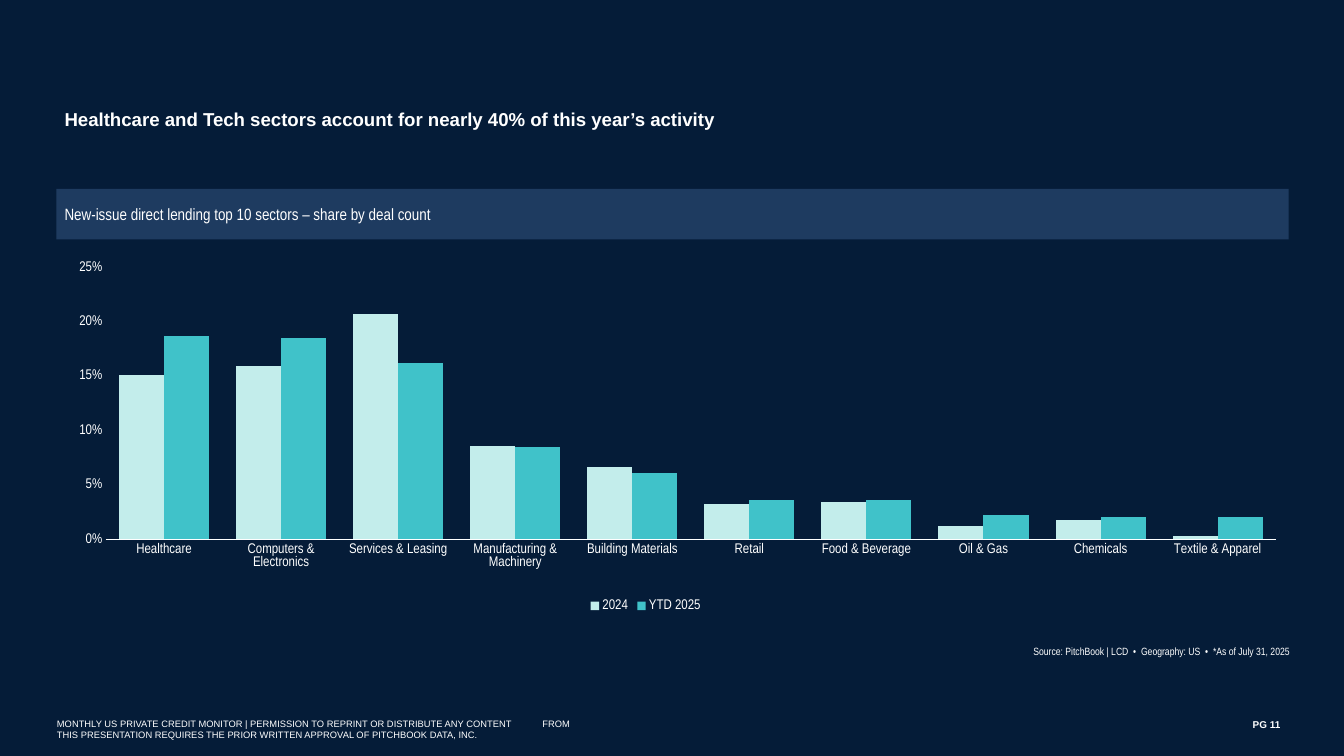
from lxml import etree
from pptx import Presentation
from pptx import util as u
from pptx.chart.data import CategoryChartData
from pptx.dml.color import RGBColor
from pptx.enum import chart as ch, shapes, text
from pptx.oxml import parse_xml
from pptx.oxml.ns import nsdecls, qn

NAVY, BAND, WHITE, MINT, TEAL = "051C38", "1E3B60", "FFFFFF", "C3EDEB", "40C2C9"
SANS, NARROW = "Arial", "Arial Narrow"
LEFT, WIDTH = 0.67, 14.67  # content column

SECTORS = ["Healthcare", "Computers & Electronics", "Services & Leasing",
           "Manufacturing & Machinery", "Building Materials", "Retail",
           "Food & Beverage", "Oil & Gas", "Chemicals", "Textile & Apparel"]
SHARES = {
    "2024": (MINT, [0.151, 0.159, 0.207, 0.086, 0.066, 0.032, 0.034, 0.012, 0.018, 0.003]),
    "YTD 2025": (TEAL, [0.187, 0.185, 0.162, 0.085, 0.061, 0.036, 0.036, 0.022, 0.02, 0.02]),
}


def rgb(hex_code):
    return RGBColor.from_string(hex_code)


def inches(box):
    return [u.Inches(v) for v in box]


def style(font, size, name=NARROW, bold=False):
    font.size, font.name, font.bold = u.Pt(size), name, bold
    font.color.rgb = rgb(WHITE)


def add_text(s, box, words, size, name=NARROW, bold=False,
             align=text.PP_ALIGN.LEFT, anchor=text.MSO_ANCHOR.TOP, tab=None):
    """Add one wrapped white paragraph, with an optional tab stop in inches."""
    tf = s.shapes.add_textbox(*inches(box)).text_frame
    tf.word_wrap, tf.vertical_anchor = True, anchor
    p = tf.paragraphs[0]
    p.text, p.alignment = words, align
    if tab:
        tabs = etree.SubElement(p._p.get_or_add_pPr(), qn("a:tabLst"))
        etree.SubElement(tabs, qn("a:tab"), pos=str(u.Inches(tab)), algn="l")
    for r in p.runs:
        style(r.font, size, name, bold)


def add_band(s, box, words):
    band = s.shapes.add_shape(shapes.MSO_SHAPE.RECTANGLE, *inches(box))
    band.shadow.inherit = False
    band.fill.solid()
    band.fill.fore_color.rgb = rgb(BAND)
    band.line.fill.background()
    add_text(s, box, words, 14, anchor=text.MSO_ANCHOR.MIDDLE)


def manual_layout(inner=False, **shares):
    """Return a chart layout whose x, y, w and h are shares of the chart."""
    target = '<c:layoutTarget val="inner"/>' if inner else ""
    sizes = "".join(f'<c:{k} val="{v}"/>' for k, v in shares.items())
    return parse_xml(f'<c:layout {nsdecls("c")}><c:manualLayout>{target}'
                     f'<c:xMode val="edge"/><c:yMode val="edge"/>{sizes}'
                     '</c:manualLayout></c:layout>')


def add_sector_chart(s, box):
    data = CategoryChartData(number_format="0%")
    data.categories = SECTORS
    for name, (_, values) in SHARES.items():
        data.add_series(name, values)
    chart = s.shapes.add_chart(ch.XL_CHART_TYPE.COLUMN_CLUSTERED, *inches(box), data).chart
    style(chart.font, 10, "Calibri")
    chart.has_title = False

    plot = chart.plots[0]
    plot.gap_width, plot.overlap, plot.vary_by_categories = 60, 0, False
    for series in plot.series:
        series.format.fill.solid()
        series.format.fill.fore_color.rgb = rgb(SHARES[series.name][0])

    cats, vals = chart.category_axis, chart.value_axis
    for axis in (cats, vals):
        axis.major_tick_mark = axis.minor_tick_mark = ch.XL_TICK_MARK.NONE
        axis.has_major_gridlines = False
        style(axis.tick_labels.font, 12)
    cats.format.line.color.rgb = rgb(WHITE)
    cats.format.line.width = u.Pt(0.75)
    vals.format.line.fill.background()
    vals.minimum_scale, vals.maximum_scale, vals.major_unit = 0, 0.25, 0.05
    vals.tick_labels.number_format = "0%"
    vals.tick_labels.number_format_is_linked = False

    chart.has_legend = True
    legend = chart.legend
    legend.position = ch.XL_LEGEND_POSITION.BOTTOM
    legend.include_in_layout = False
    style(legend.font, 12)

    area = plot._element.getparent()
    for part in (area, legend._element):
        for old in part.findall(qn("c:layout")):
            part.remove(old)
    area.insert(0, manual_layout(inner=True, x=0.04, y=0.04, w=0.95, h=0.72))
    legend._element.find(qn("c:legendPos")).addnext(manual_layout(x=0.43, y=0.91))


def add_footer(s, top):
    add_text(s, (0.58, top, 6.33, 0.37),
             "MONTHLY US PRIVATE CREDIT MONITOR | PERMISSION TO REPRINT OR DISTRIBUTE "
             "ANY CONTENT\tFROM THIS PRESENTATION REQUIRES THE PRIOR WRITTEN APPROVAL "
             "OF PITCHBOOK DATA, INC.", 8, SANS, tab=5.78)
    add_text(s, (13.75, top, 1.59, 0.24), "PG 11", 8.5, SANS, True, text.PP_ALIGN.RIGHT)


def main():
    prs = Presentation()
    prs.slide_width, prs.slide_height = u.Inches(16), u.Inches(9)
    s = prs.slides.add_slide(prs.slide_layouts[6])
    s.background.fill.solid()
    s.background.fill.fore_color.rgb = rgb(NAVY)

    add_text(s, (LEFT, 1.23, WIDTH, 1),
             "Healthcare and Tech sectors account for nearly 40% of this year’s activity",
             16, SANS, True)
    add_band(s, (LEFT, 2.25, WIDTH, 0.6),
             "New-issue direct lending top 10 sectors – share by deal count")
    add_sector_chart(s, (LEFT, 3, WIDTH, 4.5))
    add_text(s, (10.92, 7.63, 4.53, 0.25),
             "Source: PitchBook | LCD  •  Geography: US  •  *As of July 31, 2025",
             9, align=text.PP_ALIGN.RIGHT)
    add_footer(s, 8.5)
    prs.save("out.pptx")


if __name__ == "__main__":
    main()
